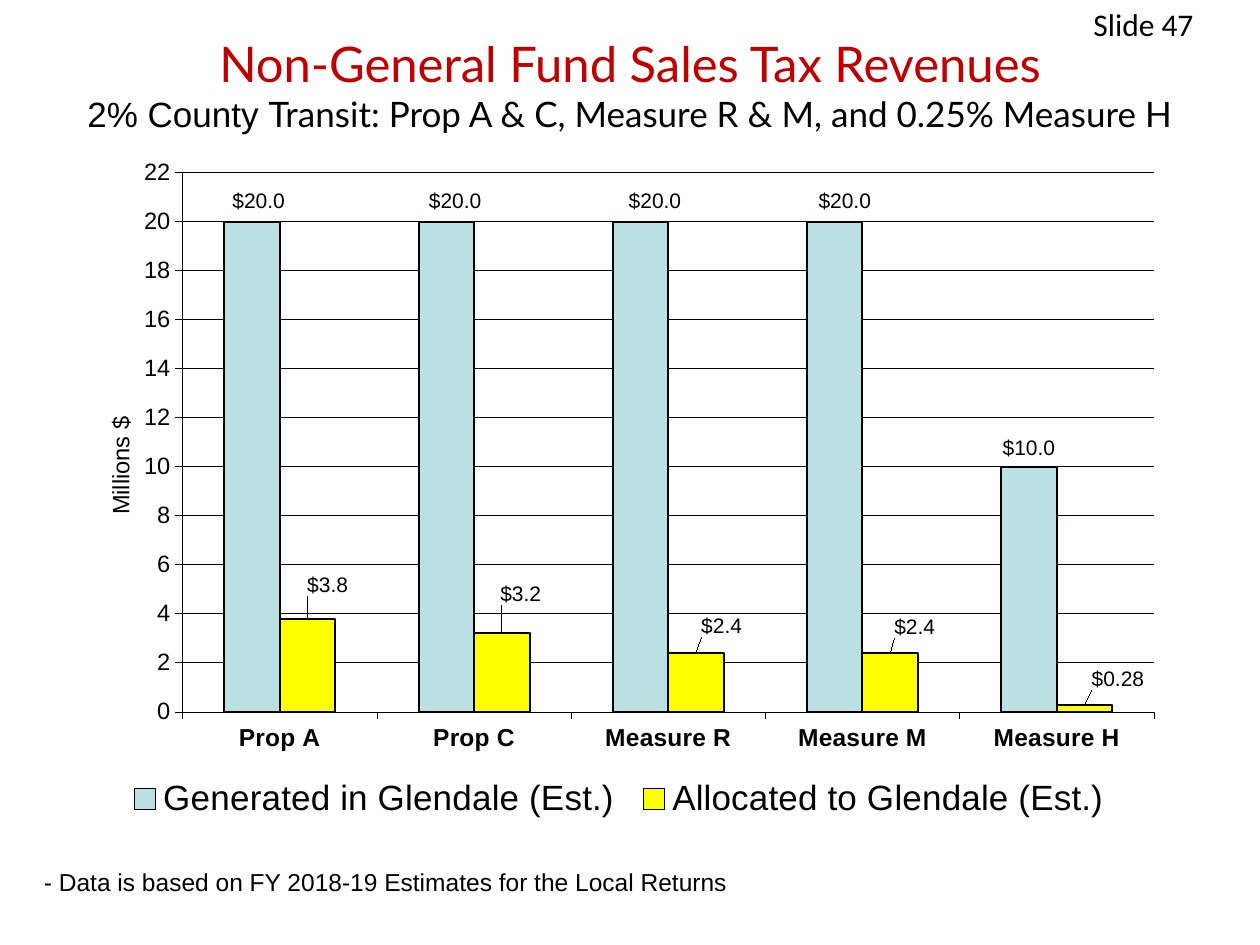
from lxml.etree import SubElement
from pptx import Presentation
from pptx.chart.data import CategoryChartData as ChartData
from pptx.dml.color import RGBColor as Rgb
from pptx.enum.chart import (XL_CHART_TYPE as ChartType, XL_LABEL_POSITION as LabelSpot,
                             XL_LEGEND_POSITION as LegendSpot, XL_TICK_LABEL_POSITION as TickSpot,
                             XL_TICK_MARK as TickMark)
from pptx.enum.text import MSO_ANCHOR as Anchor, PP_ALIGN as Align
from pptx.oxml.ns import qn
from pptx.util import Inches, Pt

COLORS = {"title": "C00000", "ink": "000000", "generated": "BBE0E3", "allocated": "FFFF00"}
COLUMNS, ROWS = 100, 75
MONEY = '[<1]"$"0.00;"$"#,##0.0'
CATEGORIES = ["Prop A", "Prop C", "Measure R", "Measure M", "Measure H"]
SERIES = [
    ("Generated in Glendale (Est.)", "generated", [20, 20, 20, 20, 10]),
    ("Allocated to Glendale (Est.)", "allocated", [3.8, 3.2, 2.4, 2.4, 0.28]),
]
LABEL_SHIFTS = [
    (0.6, -0.6), (0.8, -0.6), (1.3, -0.6), (0.9, -0.6), (0, -0.3),
    (1.8, -2.5), (1.7, -3.3), (2.3, -1.5), (2.2, -1.4), (3, -1.4),
]


def cells(deck, left, top, width, height):
    """Turn grid columns and rows into slide lengths."""
    column, row = deck.slide_width / COLUMNS, deck.slide_height / ROWS
    return int(left * column), int(top * row), int(width * column), int(height * row)


def style(font, size, color="ink", name="Arial", bold=False):
    """Set the size, colour, typeface and weight of a font."""
    font.size, font.name, font.bold = Pt(size), name, bold
    font.color.rgb = Rgb.from_string(COLORS[color])


def outline(line, width):
    """Give a line the ink colour and a width in points."""
    line.color.rgb = Rgb.from_string(COLORS["ink"])
    line.width = Pt(width)


def add_text(deck, page, place, lines, align=Align.LEFT, anchor=Anchor.TOP):
    """Add a text box whose lines are lists of styled spans."""
    frame = page.shapes.add_textbox(*cells(deck, *place)).text_frame
    frame.word_wrap, frame.vertical_anchor = True, anchor
    para = frame.paragraphs[0]
    para.alignment = align
    for number, spans in enumerate(lines):
        if number:
            para.add_line_break()
        for text, *look in spans:
            span = para.add_run()
            span.text = text
            style(span.font, *look)


def arrange(parent, index, inner=False, edge=True, **percents):
    """Place a chart part by percentages of the chart's size."""
    for old in parent.findall(qn("c:layout")):
        parent.remove(old)
    layout = parent.makeelement(qn("c:layout"))
    parent.insert(index, layout)
    manual = SubElement(layout, qn("c:manualLayout"))
    if inner:
        SubElement(manual, qn("c:layoutTarget")).set("val", "inner")
    if edge:
        for mode in ("xMode", "yMode"):
            SubElement(manual, qn(f"c:{mode}")).set("val", "edge")
    for key, percent in percents.items():
        SubElement(manual, qn(f"c:{key}")).set("val", f"{percent / 100:.3f}")


def style_axes(chart):
    """Format both axes, the gridlines and the value title."""
    names, values = chart.category_axis, chart.value_axis
    for axis, size, bold in ((names, 14, True), (values, 13.5, False)):
        style(axis.tick_labels.font, size, bold=bold)
        outline(axis.format.line, 0.28)
        axis.major_tick_mark, axis.minor_tick_mark = TickMark.OUTSIDE, TickMark.NONE
    names.tick_label_position = TickSpot.LOW
    values.minimum_scale, values.maximum_scale, values.major_unit = 0, 22, 2
    values.tick_labels.number_format = "#,##0"
    values.tick_labels.number_format_is_linked = False
    outline(values.major_gridlines.format.line, 0.28)
    para = values.axis_title.text_frame.paragraphs[0]
    para.text = "Millions $"
    style(para.runs[0].font, 13.5)


def style_series(series, color):
    """Fill the bars of a series and label each point."""
    series.format.fill.solid()
    series.format.fill.fore_color.rgb = Rgb.from_string(COLORS[color])
    outline(series.format.line, 1.12)
    labels = series.data_labels
    labels.show_value, labels.position = True, LabelSpot.OUTSIDE_END
    labels.number_format, labels.number_format_is_linked = MONEY, False
    style(labels.font, 12)
    for index in range(len(CATEGORIES)):
        label = series.points[index].data_label
        style(label.font, 12)
        label.position = LabelSpot.OUTSIDE_END


def add_revenue_chart(deck, page, place):
    """Add the column chart of generated and allocated revenue."""
    data = ChartData()
    data.categories = CATEGORIES
    for name, _, values in SERIES:
        data.add_series(name, values)
    chart = page.shapes.add_chart(ChartType.COLUMN_CLUSTERED, *cells(deck, *place), data).chart
    style(chart.font, 20)
    chart.has_title = False
    plot = chart.plots[0]
    plot.gap_width, plot.overlap, plot.vary_by_categories = 150, 0, False
    for series, (_, color, _) in zip(plot.series, SERIES):
        style_series(series, color)
    style_axes(chart)
    chart.has_legend = True
    chart.legend.position, chart.legend.include_in_layout = LegendSpot.RIGHT, False
    style(chart.legend.font, 20)
    root = chart.element
    arrange(root.find(f".//{qn('c:plotArea')}"), 0, inner=True, x=11.4, y=4.1, w=87, h=76.3)
    arrange(root.find(f".//{qn('c:legend')}"), 1, x=5.5, y=88.5, w=90, h=8.5)
    arrange(root.find(f".//{qn('c:valAx')}/{qn('c:title')}"), 1, x=4.1, y=38)
    for label, (right, down) in zip(root.iter(qn("c:dLbl")), LABEL_SHIFTS):
        arrange(label, 1, edge=False, x=right, y=down)


def main():
    """Build and save the sales tax slide."""
    deck = Presentation()
    deck.slide_width, deck.slide_height = Inches(10), Inches(7.5)
    page = deck.slides.add_slide(deck.slide_layouts[6])
    add_text(deck, page, (5, 1.7, 90, 10), [
        [("Non-General Fund Sales Tax Revenues", 28, "title", "Lato")],
        [("2% County ", 20),
         ("Transit: Prop A & C, Measure R & M, and 0.25% Measure H", 20, "ink", "Lato")],
    ], Align.CENTER, Anchor.MIDDLE)
    add_revenue_chart(deck, page, (4.4, 11.4, 88.6, 56.1))
    add_text(deck, page, (2.5, 68.3, 72.5, 3.4),
             [[("- Data is based on FY 2018-19 Estimates for the Local Returns", 14)]])
    add_text(deck, page, (85.8, -0.1, 23.3, 5), [[("Slide 47", 18, "ink", "Calibri")]])
    deck.save("out.pptx")


if __name__ == "__main__":
    main()
